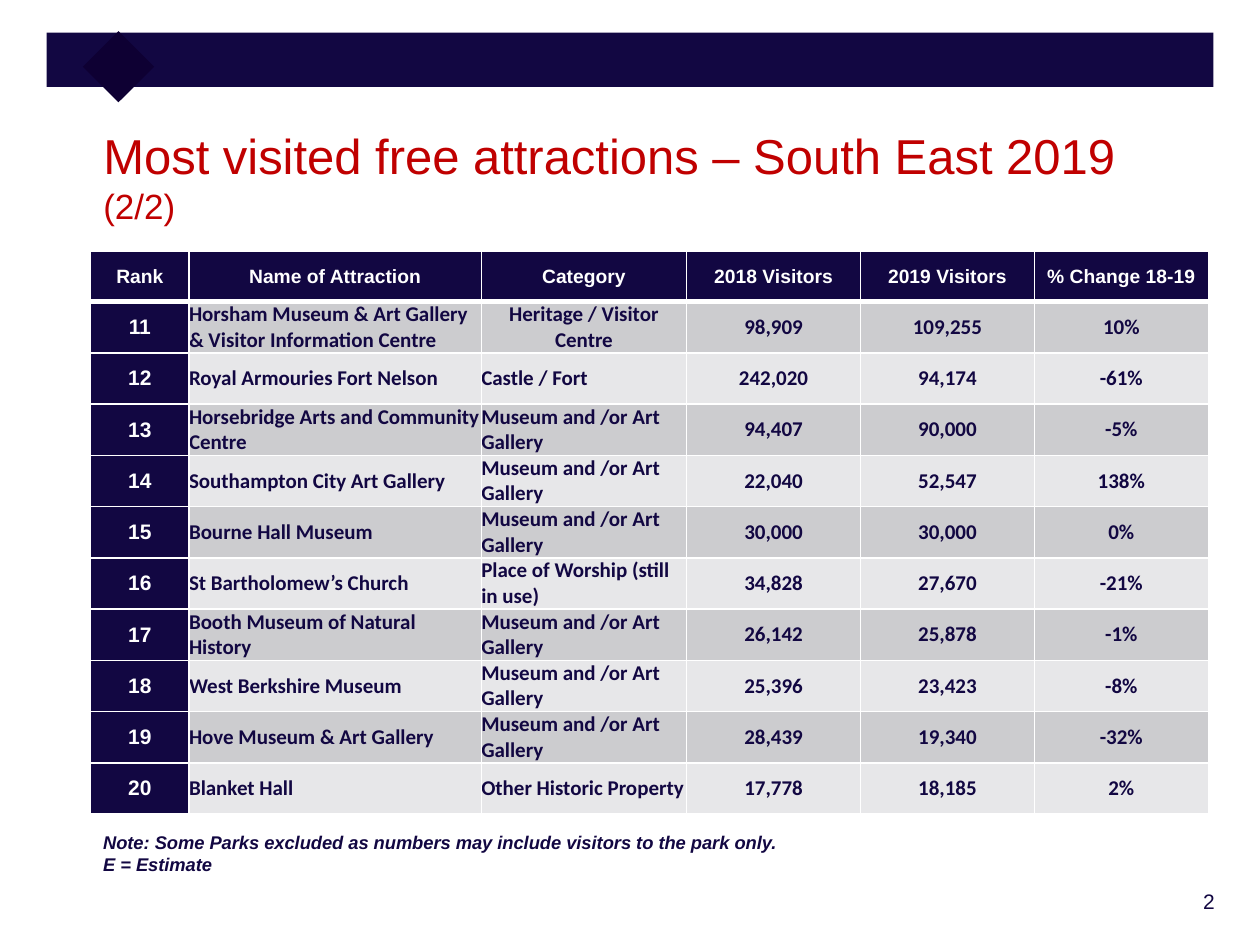
from typing import NamedTuple

from lxml import etree
from pptx import Presentation
from pptx.dml.color import RGBColor
from pptx.enum.shapes import MSO_SHAPE
from pptx.enum.text import MSO_ANCHOR, PP_ALIGN
from pptx.oxml.ns import qn
from pptx.util import Inches, Pt

NAVY = RGBColor(0x12, 0x07, 0x42)
DARK = RGBColor(0x0E, 0x00, 0x33)
RED = RGBColor(0xC0, 0x00, 0x00)
WHITE = RGBColor(0xFF, 0xFF, 0xFF)
BANDS = RGBColor(0xCC, 0xCC, 0xCF), RGBColor(0xE7, 0xE7, 0xE9)

LEFT, CENTER, RIGHT = PP_ALIGN.LEFT, PP_ALIGN.CENTER, PP_ALIGN.RIGHT
TOP, MIDDLE = MSO_ANCHOR.TOP, MSO_ANCHOR.MIDDLE
RECT = MSO_SHAPE.RECTANGLE

TABLE_LEFT, TABLE_TOP, TABLE_HEIGHT = 0.72, 1.99, 4.46
COL_WIDTHS = [0.78, 2.32, 1.63, 1.38, 1.38, 1.38]
HEADERS = ["Rank", "Name of Attraction", "Category",
           "2018 Visitors", "2019 Visitors", "% Change 18-19"]
FIRST_RANK = 11
MUSEUM = "Museum and /or Art Gallery"


class Attraction(NamedTuple):
    name: str
    category: str
    visitors_2018: str
    visitors_2019: str
    change: str
    category_align: PP_ALIGN = LEFT


ATTRACTIONS = [
    Attraction("Horsham Museum & Art Gallery & Visitor Information Centre",
               "Heritage / Visitor Centre", "98,909", "109,255", "10%", CENTER),
    Attraction("Royal Armouries Fort Nelson", "Castle / Fort", "242,020", "94,174", "-61%"),
    Attraction("Horsebridge Arts and Community Centre", MUSEUM, "94,407", "90,000", "-5%"),
    Attraction("Southampton City Art Gallery", MUSEUM, "22,040", "52,547", "138%"),
    Attraction("Bourne Hall Museum", MUSEUM, "30,000", "30,000", "0%"),
    Attraction("St Bartholomew’s Church", "Place of Worship (still in use)",
               "34,828", "27,670", "-21%"),
    Attraction("Booth Museum of Natural History", MUSEUM, "26,142", "25,878", "-1%"),
    Attraction("West Berkshire Museum", MUSEUM, "25,396", "23,423", "-8%"),
    Attraction("Hove Museum & Art Gallery", MUSEUM, "28,439", "19,340", "-32%"),
    Attraction("Blanket Hall", "Other Historic Property", "17,778", "18,185", "2%"),
]


def add_text(p, text: str, *, size: float, color: RGBColor = NAVY, font: str = "Arial",
             bold: bool = False, italic: bool = False, align: PP_ALIGN = LEFT) -> None:
    p.alignment = align
    r = p.add_run()
    r.text = text
    r.font.name = font
    r.font.size = Pt(size)
    r.font.bold = bold
    r.font.italic = italic
    r.font.color.rgb = color


def place(sp, left: float, top: float, width: float, height: float) -> None:
    sp.left, sp.top = Inches(left), Inches(top)
    sp.width, sp.height = Inches(width), Inches(height)


def add_rect(slide, left: float, top: float, width: float, height: float,
             color: RGBColor, rotation: float = 0) -> None:
    sp = slide.shapes.add_shape(RECT, Inches(left), Inches(top), Inches(width), Inches(height))
    sp.shadow.inherit = False
    sp.fill.solid()
    sp.fill.fore_color.rgb = color
    sp.line.fill.background()
    sp.rotation = rotation


def add_box(slide, left: float, top: float, width: float, height: float,
            lines: list[str], **fmt) -> None:
    sp = slide.shapes.add_textbox(Inches(left), Inches(top), Inches(width), Inches(height))
    tf = sp.text_frame
    tf.word_wrap = True
    tf.vertical_anchor = TOP
    for i, line in enumerate(lines):
        add_text(tf.add_paragraph() if i else tf.paragraphs[0], line, **fmt)


def set_borders(cell, **widths: float) -> None:
    tc_pr = cell._tc.get_or_add_tcPr()
    for side in "LRTB":
        ln = etree.SubElement(tc_pr, qn(f"a:ln{side}"), w=str(Pt(widths.get(side, 1))))
        fill = etree.SubElement(ln, qn("a:solidFill"))
        etree.SubElement(fill, qn("a:srgbClr"), val=str(WHITE))


def fill_cell(cell, text: str, fill: RGBColor, *, inset: bool = True,
              borders: dict[str, float], **fmt) -> None:
    set_borders(cell, **borders)
    cell.fill.solid()
    cell.fill.fore_color.rgb = fill
    cell.vertical_anchor = MIDDLE
    if not inset:
        cell.margin_left = cell.margin_right = cell.margin_top = cell.margin_bottom = 0
    add_text(cell.text_frame.paragraphs[0], text, bold=True, **fmt)


def add_attractions_table(slide) -> None:
    n_rows = len(ATTRACTIONS) + 1
    table = slide.shapes.add_table(
        n_rows, len(COL_WIDTHS), Inches(TABLE_LEFT), Inches(TABLE_TOP),
        Inches(sum(COL_WIDTHS)), Inches(TABLE_HEIGHT)).table
    table.horz_banding = False
    for col, width in zip(table.columns, COL_WIDTHS):
        col.width = Inches(width)
    for row in table.rows:
        row.height = Inches(TABLE_HEIGHT / n_rows)

    for c, header in enumerate(HEADERS):
        fill_cell(table.cell(0, c), header, NAVY, borders={"B": 3},
                  size=11, color=WHITE, align=CENTER)
    for i, a in enumerate(ATTRACTIONS):
        borders = {} if i else {"T": 3}
        fill_cell(table.cell(i + 1, 0), str(FIRST_RANK + i), NAVY, borders=borders,
                  size=12, color=WHITE, align=CENTER)
        aligns = [LEFT, a.category_align, CENTER, CENTER, CENTER]
        for c, (text, align) in enumerate(zip(a[:5], aligns), start=1):
            fill_cell(table.cell(i + 1, c), text, BANDS[i % 2], inset=False,
                      borders=borders, size=12, font="Calibri", align=align)


def add_title(slide) -> None:
    sp = slide.shapes.title
    place(sp, 0.72, 0.95, 8.91, 0.89)
    tf = sp.text_frame
    tf.word_wrap = True
    tf.vertical_anchor = MIDDLE
    p = tf.paragraphs[0]
    add_text(p, "Most visited free attractions – South East 2019", size=28, color=RED)
    p.add_line_break()
    add_text(p, "(2/2)", size=20, color=RED)


def main() -> None:
    prs = Presentation()
    prs.slide_width, prs.slide_height = Inches(10), Inches(7.5)
    slide = prs.slides.add_slide(prs.slide_layouts[5])
    add_rect(slide, 0.37, 0.26, 9.26, 0.43, NAVY)
    add_rect(slide, 0.74, 0.33, 0.4, 0.4, DARK, rotation=45)
    add_title(slide)
    add_attractions_table(slide)
    add_box(slide, 0.72, 6.55, 8.65, 0.45,
            ["Note: Some Parks excluded as numbers may include visitors to the park only.",
             "E = Estimate"], size=10.5, bold=True, italic=True)
    add_box(slide, 8.53, 7, 1.21, 0.36, ["2"], size=12, align=RIGHT)
    prs.save("out.pptx")


if __name__ == "__main__":
    main()
